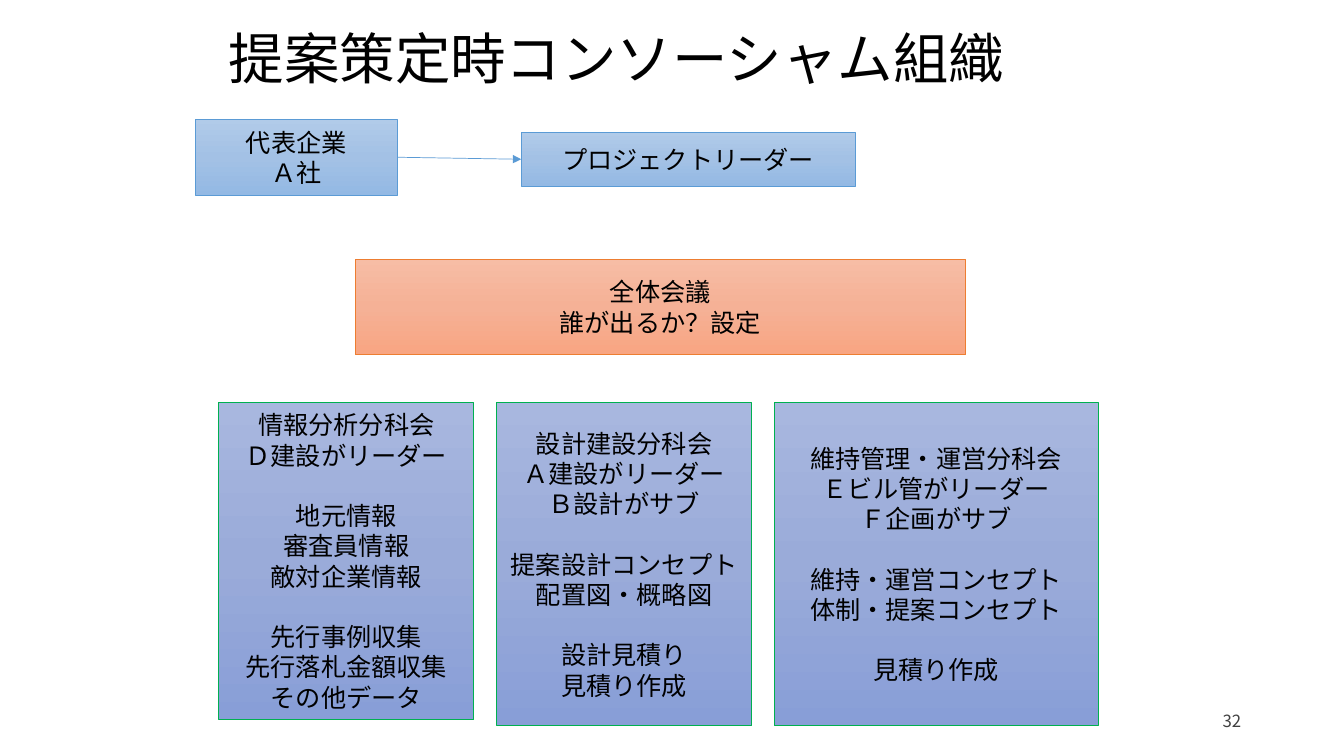
import copy
import lxml.etree
import pptx
import pptx.util
import pptx.dml.color
import pptx.enum.shapes
import pptx.enum.text
import pptx.oxml.ns

# Content: groups of lines, with a line's gap between groups
TITLE = "提案策定時コンソーシャム組織"
PAGE = "32"
FIRM = [["代表企業", "Ａ社"]]
LEAD = [["プロジェクトリーダー"]]
BOARD = [["全体会議", "誰が出るか？設定"]]
TEAMS = [
    # width, height, groups
    (253, 315, [["情報分析分科会", "Ｄ建設がリーダー"],
                ["地元情報", "審査員情報", "敵対企業情報"],
                ["先行事例収集", "先行落札金額収集", "その他データ"]]),
    (253, 321, [["設計建設分科会", "Ａ建設がリーダー", "Ｂ設計がサブ"],
                ["提案設計コンセプト", "配置図・概略図"],
                ["設計見積り", "見積り作成"]]),
    (321, 321, [["維持管理・運営分科会", "Ｅビル管がリーダー", "Ｆ企画がサブ"],
                ["維持・運営コンセプト", "体制・提案コンセプト"],
                ["見積り作成"]]),
]

# Grid: 1333 columns by 750 rows
COLS, ROWS = 1333, 750
CELL = pptx.util.Inches(0.01)
TEAM_X, TEAM_Y, GAP = 217, 399, 22.5

# Style: three gradient stops and a line
BLUE = (["B1CBE9", "A3C1E5", "93B9E4"], "5B9BD5")
CORAL = (["F7BDA5", "F5B196", "F8A582"], "ED7D31")
INDIGO = (["A8B7DF", "9AABD9", "889ED7"], "00B050")
SANS, ROUND = "Noto Sans CJK JP", "Quicksand"
LINE_GAP = 21.6

ALIGN = pptx.enum.text.PP_ALIGN
qn = pptx.oxml.ns.qn


def rgb(code):
    return pptx.dml.color.RGBColor.from_string(code)


def grid(*spans):
    return [int(span * CELL) for span in spans]


def write(shape, groups, size, font, color, align):
    frame = shape.text_frame
    frame.word_wrap = True
    frame.vertical_anchor = pptx.enum.text.MSO_ANCHOR.MIDDLE
    frame.text = "\n".join(line for group in groups for line in group)
    heads, count = set(), 0
    for group in groups[:-1]:
        count += len(group)
        heads.add(count)
    for i, para in enumerate(frame.paragraphs):
        para.alignment = align
        if i in heads:
            para.space_before = pptx.util.Pt(LINE_GAP)
        for run in para.runs:
            run.font.size = pptx.util.Pt(size)
            run.font.name = font
            run.font.color.rgb = rgb(color)
            latin = run.font._element.find(qn("a:latin"))
            east = lxml.etree.Element(qn("a:ea"), typeface=font)
            latin.addnext(east)


def label(spot, text, size, color, align):
    box = slide.shapes.add_textbox(*grid(*spot))
    write(box, [[text]], size, SANS, color, align)


def panel(spot, groups, style):
    stops, edge = style
    box = slide.shapes.add_shape(
        pptx.enum.shapes.MSO_SHAPE.RECTANGLE, *grid(*spot))
    box.shadow.inherit = False
    box.fill.gradient()
    box.fill.gradient_angle = 270
    first = box._element.spPr.find(".//" + qn("a:gs"))
    first.addnext(copy.deepcopy(first))
    for i, stop in enumerate(box.fill.gradient_stops):
        stop.position = i / 2
        stop.color.rgb = rgb(stops[i])
    box.line.color.rgb = rgb(edge)
    box.line.width = pptx.util.Pt(0.5)
    write(box, groups, 18, ROUND, "000000", ALIGN.CENTER)
    return box


deck = pptx.Presentation()
deck.slide_width, deck.slide_height = grid(COLS, ROWS)
slide = deck.slides.add_slide(deck.slide_layouts[6])

# Title
label((217, 30, 900, 54), TITLE, 39.6, "000000", ALIGN.LEFT)

# Lead firm and project leader, joined by an arrow
lead = panel((517, 131, 331, 54), LEAD, BLUE)
firm = panel((194, 118, 200, 76), FIRM, BLUE)
arrow = slide.shapes.add_connector(
    pptx.enum.shapes.MSO_CONNECTOR.STRAIGHT, 0, 0, 0, 0)
arrow.begin_connect(firm, 3)
arrow.end_connect(lead, 1)
arrow.line.color.rgb = rgb(BLUE[1])
arrow.line.width = pptx.util.Pt(0.5)
lxml.etree.SubElement(arrow.line._get_or_add_ln(), qn("a:tailEnd"), type="triangle")
lxml.etree.SubElement(arrow._element.spPr, qn("a:effectLst"))

# Teams, side by side
left = TEAM_X
for width, height, groups in TEAMS:
    panel((left, TEAM_Y, width, height), groups, INDIGO)
    left += width + GAP

# General meeting
panel((352, 257, 606, 95), BOARD, CORAL)

# Page number
label((883, 695, 358, 40), PAGE, 12, "404040", ALIGN.RIGHT)

deck.save("out.pptx")
